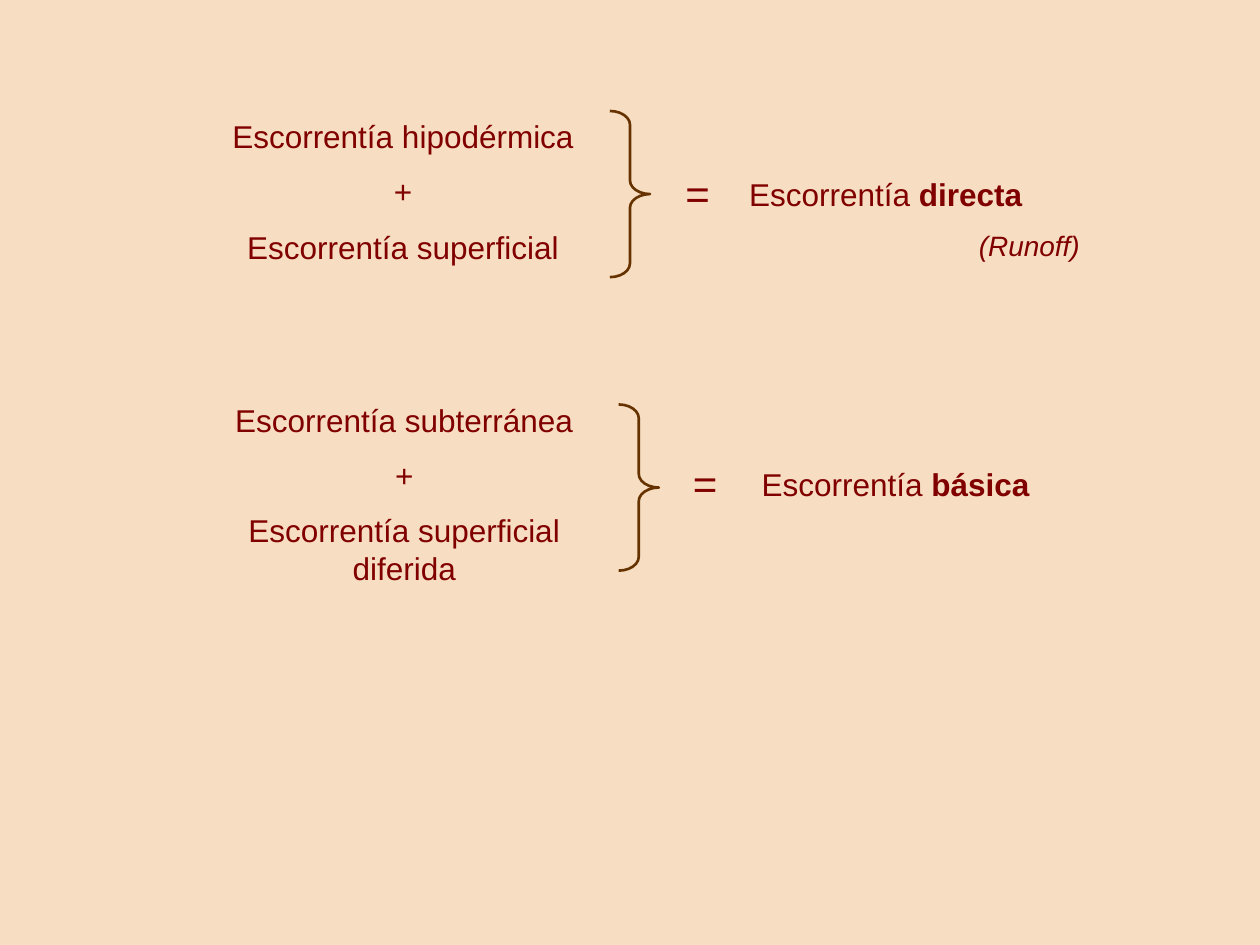
import pptx
import pptx.util
import pptx.dml.color
import pptx.enum.shapes
import pptx.enum.text

Pt = pptx.util.Pt
ALIGN = pptx.enum.text.PP_ALIGN
COLORS = {"paper": "F7DDC1", "text": "800000", "brace": "663300"}
SUM_SIZE = 18
EQUALS_SIZE = 24
NOTE_SIZE = 16


def color(name):
    return pptx.dml.color.RGBColor.from_string(COLORS[name])


def add_text(page, box, lines):
    shape = page.shapes.add_textbox(*map(Pt, box))
    frame = shape.text_frame
    frame.word_wrap = True
    frame.auto_size = pptx.enum.text.MSO_AUTO_SIZE.SHAPE_TO_FIT_TEXT
    for index, (align, size, spans) in enumerate(lines):
        para = frame.paragraphs[0] if index == 0 else frame.add_paragraph()
        para.alignment = align
        para.space_before = Pt(round(size * 0.56))
        for text, extra in spans:
            span = para.add_run()
            span.text = text
            span.font.color.rgb = color("text")
            for key, value in {"name": "Arial", "size": Pt(size), **extra}.items():
                setattr(span.font, key, value)


def add_brace(page, box):
    brace = page.shapes.add_shape(
        pptx.enum.shapes.MSO_SHAPE.RIGHT_BRACE, *map(Pt, box))
    brace.shadow.inherit = False
    brace.adjustments[0] = 0.342
    brace.adjustments[1] = 0.5
    brace.fill.background()
    brace.line.color.rgb = color("brace")
    brace.line.width = Pt(1.5)


def add_equation(page, boxes, terms, kind, note=None):
    add_text(page, boxes["sum"],
             [(ALIGN.CENTER, SUM_SIZE, [(term, {})]) for term in terms])
    add_text(page, boxes["equals"], [(ALIGN.LEFT, EQUALS_SIZE, [("=", {})])])
    add_brace(page, boxes["brace"])
    result = [(ALIGN.CENTER, SUM_SIZE,
               [("Escorrentía ", {}), (kind, {"bold": True})])]
    if note:
        result.append((ALIGN.RIGHT, NOTE_SIZE, [(note, {"italic": True})]))
    add_text(page, boxes["result"], result)


def main():
    deck = pptx.Presentation()
    deck.slide_width, deck.slide_height = Pt(720), Pt(540)
    page = deck.slides.add_slide(deck.slide_layouts[6])
    page.background.fill.solid()
    page.background.fill.fore_color.rgb = color("paper")

    add_equation(
        page,
        {"sum": (112.3, 63.4, 236, 93.6), "equals": (384.5, 92.2, 70.6, 36),
         "brace": (348.5, 63.4, 23, 95), "result": (388.1, 96.5, 236, 57.6)},
        ["Escorrentía hipodérmica", "+", "Escorrentía superficial"],
        "directa", "(Runoff)")
    add_equation(
        page,
        {"sum": (113, 225.4, 236, 115.2), "equals": (388.8, 257.8, 70.6, 36),
         "brace": (353.5, 231.1, 23, 95), "result": (393.8, 262.1, 236, 28.8)},
        ["Escorrentía subterránea", "+", "Escorrentía superficial diferida"],
        "básica")
    deck.save("out.pptx")


if __name__ == "__main__":
    main()
